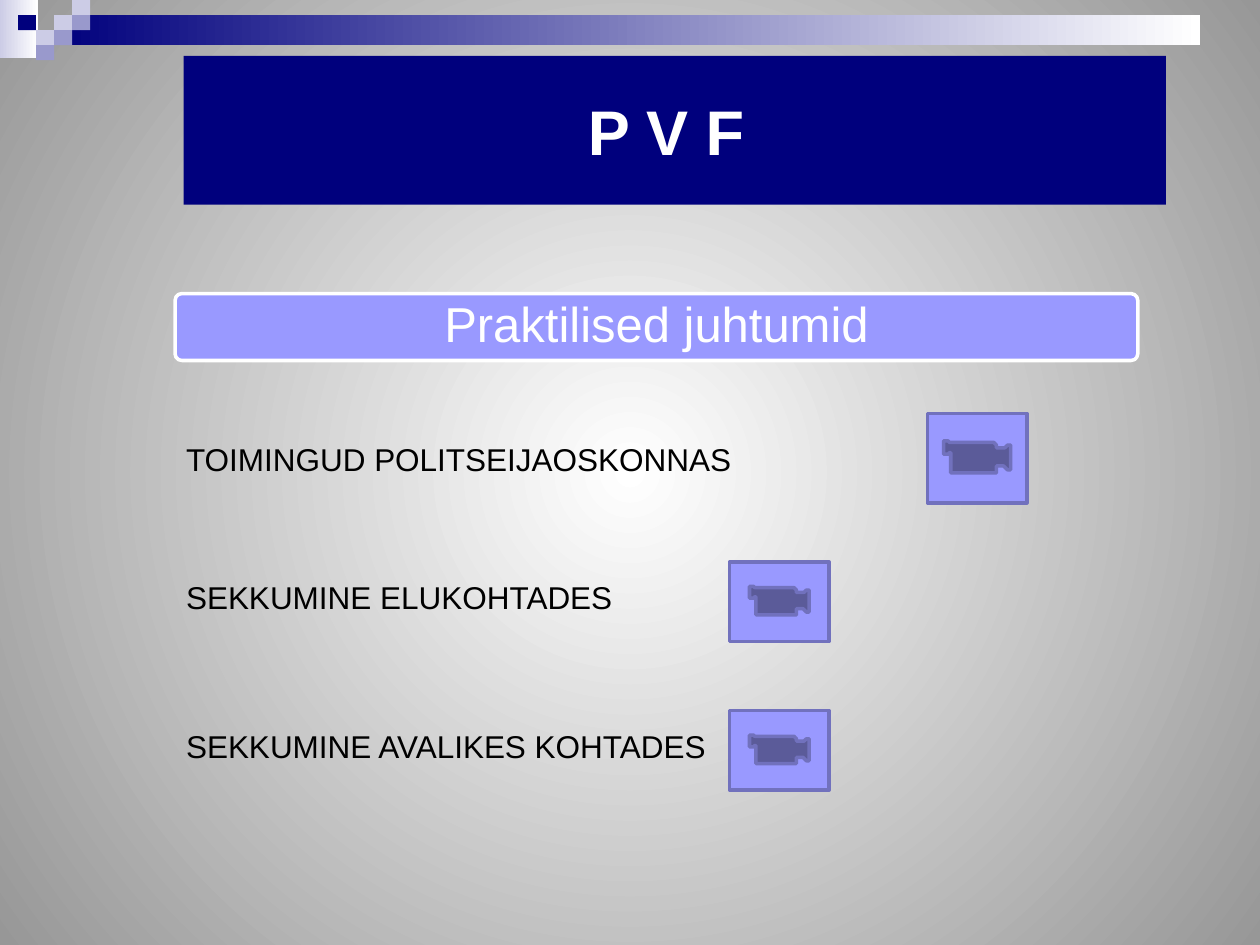
from lxml.etree import SubElement
from pptx import Presentation
from pptx.dml.color import RGBColor
from pptx.enum.shapes import MSO_SHAPE
from pptx.enum.text import MSO_ANCHOR, PP_ALIGN
from pptx.oxml.ns import qn
from pptx.util import Pt

NAVY = RGBColor(0x00, 0x00, 0x7D)
WHITE = RGBColor(0xFF, 0xFF, 0xFF)
BLACK = RGBColor(0x00, 0x00, 0x00)
GREY = RGBColor(0x97, 0x97, 0x97)
PALE = RGBColor(0xCC, 0xCC, 0xE6)
MID = RGBColor(0x99, 0x99, 0xCC)
VIOLET = RGBColor(0x99, 0x99, 0xFF)
VIOLET_EDGE = RGBColor(0x71, 0x71, 0xBD)

CASES = [
    ("TOIMINGUD POLITSEIJAOSKONNAS", 247.7, (529.9, 236.2, 56.9, 51.1)),
    ("SEKKUMINE ELUKOHTADES", 326.9, (416.9, 321.1, 56.9, 45.4)),
    ("SEKKUMINE AVALIKES KOHTADES", 411.8, (416.9, 406.1, 56.9, 45.4)),
]
SQUARES = [(3, 1, PALE), (4, 0, PALE), (4, 1, MID), (2, 2, PALE),
           (1, 1, NAVY), (3, 2, MID), (2, 3, MID)]


def points(box):
    """Turn a left, top, width, height box into lengths."""
    return [Pt(value) for value in box]


def blend(fill, start, end):
    """Give a fill a gradient of two colours."""
    fill.gradient()
    for stop, color in zip(fill.gradient_stops, (start, end)):
        stop.color.rgb = color


def add_block(page, kind, box, color=None, edge=None):
    """Add a flat preset shape with an optional fill and edge."""
    shape = page.shapes.add_shape(kind, *points(box))
    shape.shadow.inherit = False
    if color is not None:
        shape.fill.solid()
        shape.fill.fore_color.rgb = color
    if edge is None:
        shape.line.fill.background()
    else:
        shape.line.color.rgb = edge
        shape.line.width = Pt(2)
    return shape


def write(frame, text, size, color, align=PP_ALIGN.LEFT, bold=False):
    """Write one formatted run into a text frame."""
    frame.word_wrap = True
    para = frame.paragraphs[0]
    para.alignment = align
    span = para.add_run()
    span.text = text
    span.font.name = "Arial"
    span.font.size = Pt(size)
    span.font.bold = bold
    span.font.color.rgb = color


def set_background(page):
    """Fill the page with a circular gradient from its centre."""
    blend(page.background.fill, WHITE, GREY)
    gradient = page.element.find(".//" + qn("a:gradFill"))
    gradient.remove(gradient.find(qn("a:lin")))
    circle = SubElement(gradient, qn("a:path"), {"path": "circle"})
    sides = {side: "50000" for side in "ltrb"}
    SubElement(circle, qn("a:fillToRect"), sides)


def add_header(page, box):
    """Place the gradient bar and the squares on a grid in the box."""
    left, top, width, height = box
    step_x, step_y = 10.3, height / 4
    bars = [((left, top, 21.6, 33.1), PALE),
            ((left + 3 * step_x, top + step_y, width - 3 * step_x, 2 * step_y), NAVY)]
    for bar_box, color in bars:
        bar = add_block(page, MSO_SHAPE.RECTANGLE, bar_box)
        blend(bar.fill, color, WHITE)
        bar.fill.gradient_angle = 0
    for column, row, color in SQUARES:
        cell = (left + column * step_x, top + row * step_y, step_x, step_y)
        add_block(page, MSO_SHAPE.RECTANGLE, cell, color)


def add_title(page, box):
    """Fill the title placeholder."""
    title = page.shapes.title
    title.left, title.top, title.width, title.height = points(box)
    title.fill.solid()
    title.fill.fore_color.rgb = NAVY
    title.text_frame.vertical_anchor = MSO_ANCHOR.MIDDLE
    write(title.text_frame, "P V F ", 36, WHITE, PP_ALIGN.CENTER, True)


def add_subtitle(page, box):
    """Place the rounded band with the section heading."""
    band = add_block(page, MSO_SHAPE.ROUNDED_RECTANGLE, box, VIOLET, WHITE)
    band.adjustments[0] = 0.1
    frame = band.text_frame
    frame.margin_left = frame.margin_right = Pt(4.2)
    frame.margin_top = frame.margin_bottom = Pt(2.8)
    frame.vertical_anchor = MSO_ANCHOR.MIDDLE
    write(frame, "Praktilised juhtumid", 28, WHITE, PP_ALIGN.CENTER)
    frame.paragraphs[0].line_spacing = 0.9


def add_case(page, box, text, button_box):
    """Place one case label and its film button."""
    label = page.shapes.add_textbox(*points(box))
    write(label.text_frame, text, 18, BLACK)
    add_block(page, MSO_SHAPE.ACTION_BUTTON_MOVIE, button_box, VIOLET, VIOLET_EDGE)


def main():
    """Build and save the deck."""
    deck = Presentation()
    deck.slide_width, deck.slide_height = Pt(720), Pt(540)
    page = deck.slides.add_slide(deck.slide_layouts[5])
    set_background(page)
    add_header(page, (0, 0, 685.8, 34.4))
    add_title(page, (105, 31.9, 561.3, 85))
    add_subtitle(page, (100.1, 167.8, 550.1, 38.2))
    for text, top, button_box in CASES:
        add_case(page, (99.2, top, 431.3, 29.1), text, button_box)
    deck.save("out.pptx")


if __name__ == "__main__":
    main()
